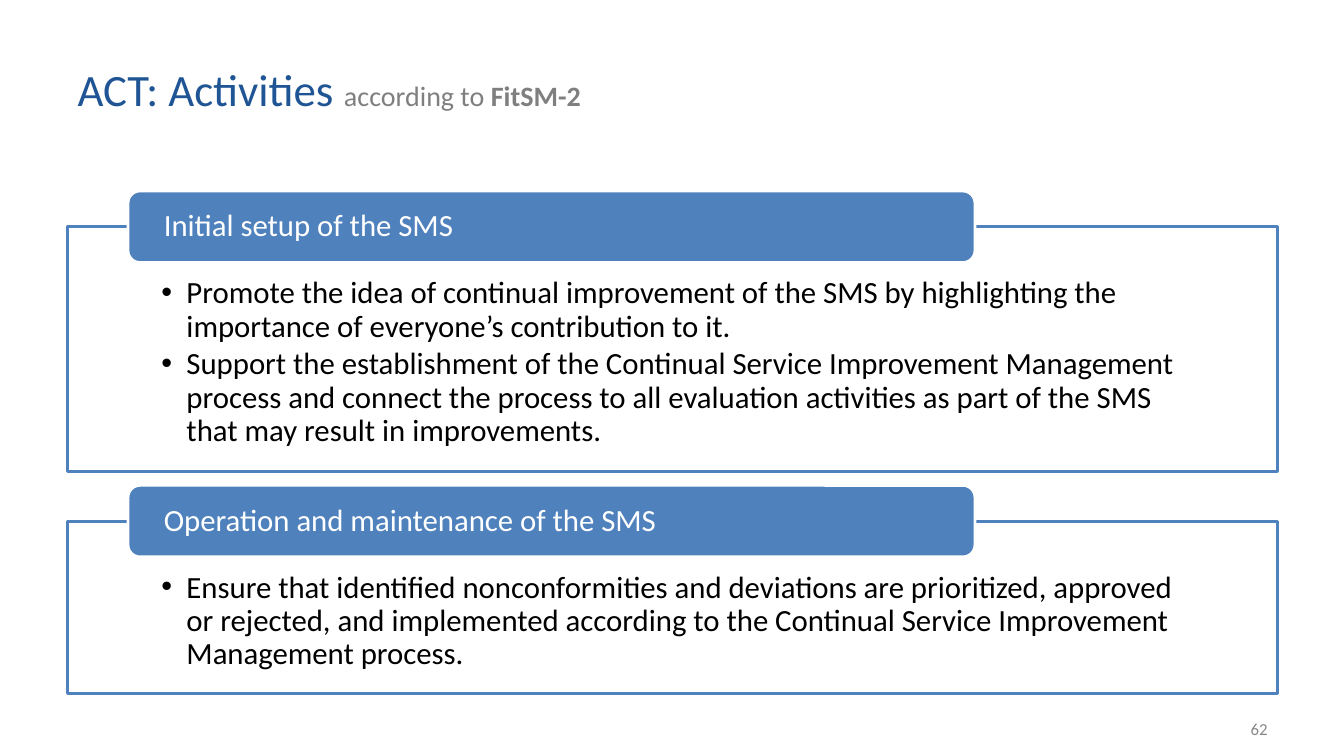
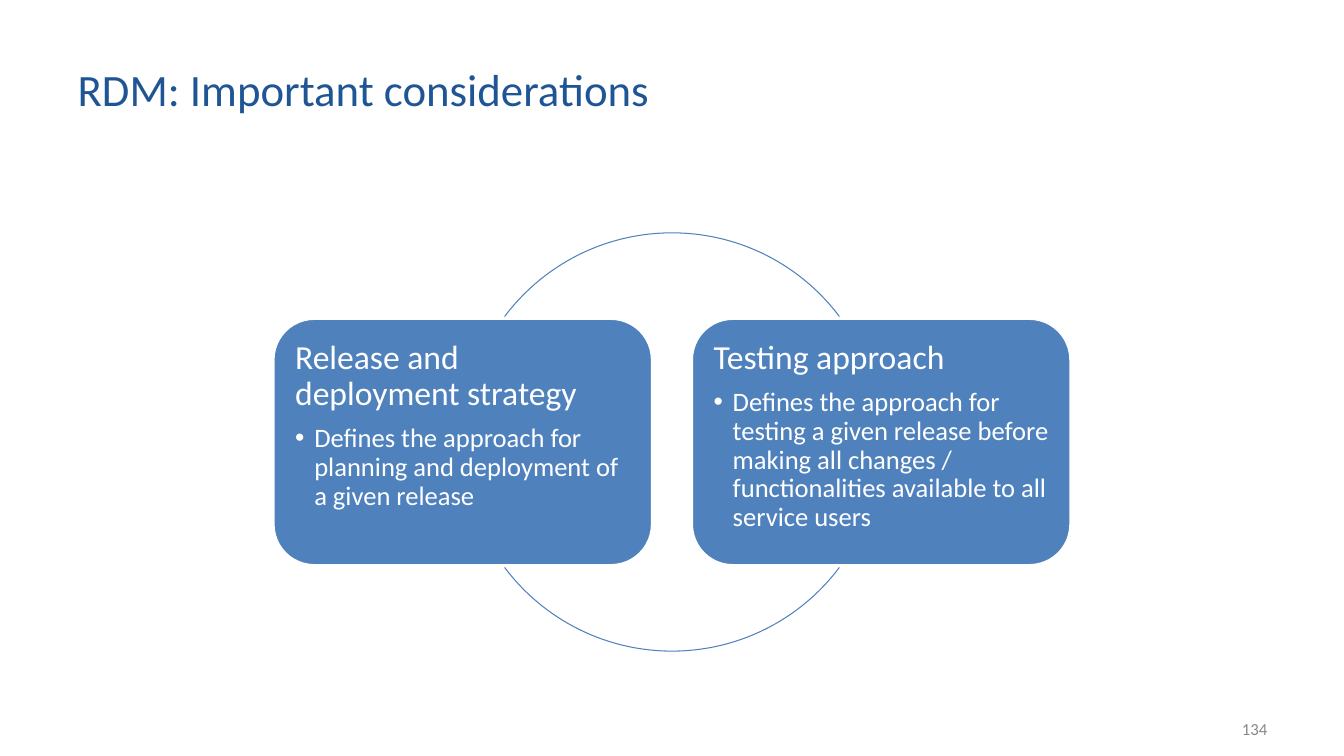
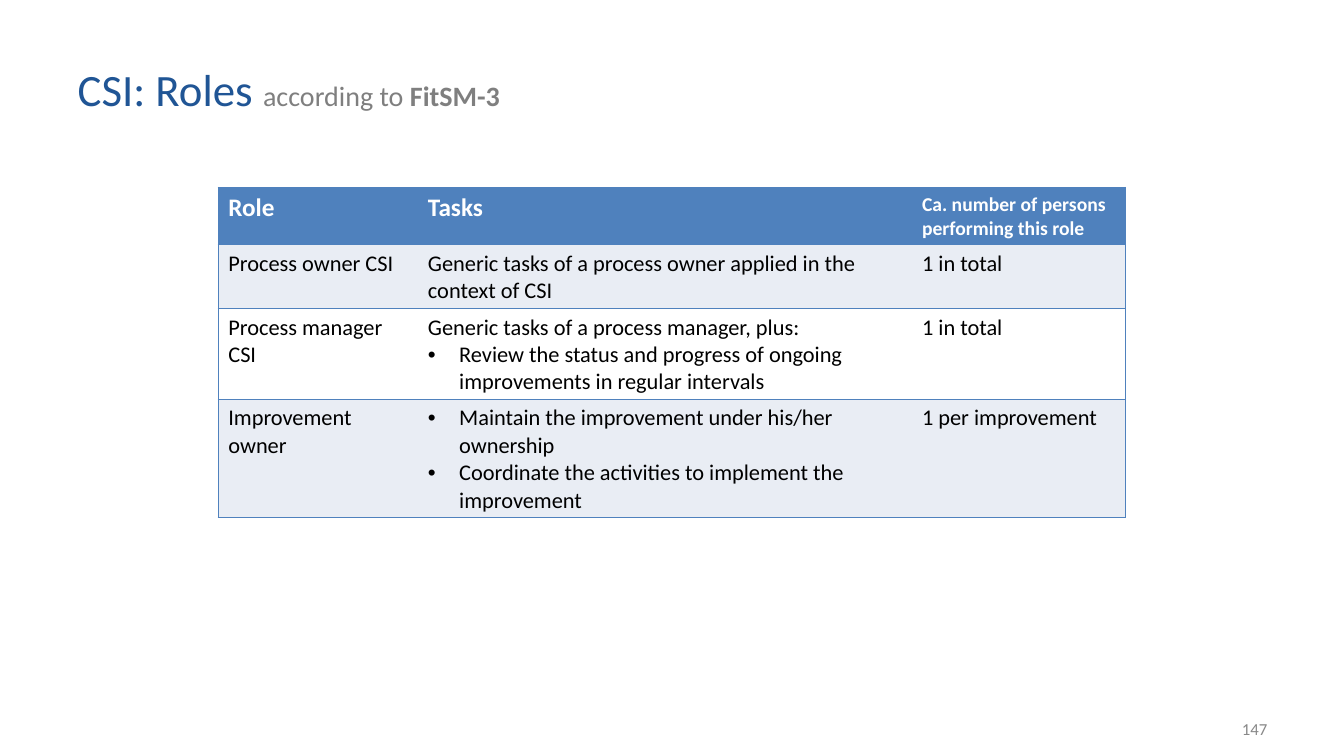
from lxml.etree import SubElement
from pptx import Presentation
from pptx.dml.color import RGBColor
from pptx.enum.shapes import MSO_SHAPE as Preset
from pptx.enum.text import MSO_ANCHOR as Anchor, MSO_AUTO_SIZE as AutoSize, PP_ALIGN as Align
from pptx.oxml.ns import qn
from pptx.util import Inches, Pt

# Shared look
FONT = "Calibri"
TITLE_BLUE = RGBColor(0x20, 0x55, 0x95)
BLUE = RGBColor(0x4F, 0x81, 0xBD)
PALE_BLUE = RGBColor(0xE9, 0xED, 0xF4)
WHITE = RGBColor(0xFF, 0xFF, 0xFF)
BLACK = RGBColor(0, 0, 0)
GREY = RGBColor(0x7F, 0x7F, 0x7F)
NUMBER_GREY = RGBColor(0x88, 0x88, 0x88)

WIDTH, HEIGHT = 13.33, 7.5
MARGIN = 0.67
CONTENT_WIDTH = 12
CENTER = WIDTH / 2
NO_STYLE = "{2D5ABB26-0587-4C30-8999-92F81FD0307C}"

# Content
ACTIVITIES = {
    "title": "ACT: Activities", "standard": "FitSM-2", "number": 62,
    "panels": [
        ("Initial setup of the SMS", 2.43, [
            "Promote the idea of continual improvement of the SMS by highlighting the "
            "importance of everyone’s contribution to it.",
            "Support the establishment of the Continual Service Improvement Management "
            "process and connect the process to all evaluation activities as part of the "
            "SMS that may result in improvements.",
        ]),
        ("Operation and maintenance of the SMS", 1.71, [
            "Ensure that identified nonconformities and deviations are prioritized, approved "
            "or rejected, and implemented according to the Continual Service Improvement "
            "Management process.",
        ]),
    ],
}
CONSIDERATIONS = {
    "title": "RDM: Important considerations", "standard": None, "number": 134,
    "cards": [
        ("Release and deployment strategy",
         "Defines the approach for planning and deployment of a given release"),
        ("Testing approach",
         "Defines the approach for testing a given release before making all changes / "
         "functionalities available to all service users"),
    ],
}
# In the table, each task is (has a bullet, text)
ROLES = {
    "title": "CSI: Roles", "standard": "FitSM-3", "number": 147,
    "columns": [("Role", 1.98, 18), ("Tasks", 4.9, 18),
                ("Ca. number of persons performing this role", 2.12, 14)],
    "row_heights": [0.57, 0.63, 0.9, 1.17],
    "rows": [
        ("Process owner CSI",
         [(False, "Generic tasks of a process owner applied in the context of CSI")],
         "1 in total"),
        ("Process manager CSI",
         [(False, "Generic tasks of a process manager, plus:"),
          (True, "Review the status and progress of ongoing improvements in regular intervals")],
         "1 in total"),
        ("Improvement owner",
         [(True, "Maintain the improvement under his/her ownership"),
          (True, "Coordinate the activities to implement the improvement")],
         "1 per improvement"),
    ],
}


# Text helpers
def format_font(font, size, color, bold=False):
    font.name = FONT
    font.size = Pt(size)
    font.color.rgb = color
    font.bold = bold


def add_bullet(paragraph, indent, color):
    properties = paragraph._p.get_or_add_pPr()
    properties.set("marL", str(Inches(indent)))
    properties.set("indent", str(-Inches(indent)))
    bullet_color = SubElement(properties, qn("a:buClr"))
    SubElement(bullet_color, qn("a:srgbClr"), val=str(color))
    SubElement(properties, qn("a:buFont"), typeface="Arial")
    SubElement(properties, qn("a:buChar"), char="•")


def write_paragraphs(text_frame, items, color, line_spacing=None):
    """Each item is (text, size, bold, bullet indent, space before)."""
    for index, (text, size, bold, indent, space) in enumerate(items):
        paragraph = text_frame.paragraphs[0] if index == 0 else text_frame.add_paragraph()
        paragraph.text = text
        paragraph.alignment = Align.LEFT
        if indent:
            add_bullet(paragraph, indent, color)
        if line_spacing:
            paragraph.line_spacing = line_spacing
        if index and space:
            paragraph.space_before = Pt(space)
        format_font(paragraph.runs[0].font, size, color, bold)


def set_frame(text_frame, insets, anchor):
    text_frame.word_wrap = True
    text_frame.vertical_anchor = anchor
    (text_frame.margin_left, text_frame.margin_top,
     text_frame.margin_right, text_frame.margin_bottom) = map(Inches, insets)


# Shape helpers
def add_shape(slide, preset, box, fill, line, line_width):
    shape = slide.shapes.add_shape(preset, *map(Inches, box))
    shape.shadow.inherit = False
    if fill is None:
        shape.fill.background()
    else:
        shape.fill.solid()
        shape.fill.fore_color.rgb = fill
    shape.line.color.rgb = line
    shape.line.width = Pt(line_width)
    return shape


def add_slide(presentation, content):
    """Title and slide number, the same on every slide."""
    slide = presentation.slides.add_slide(presentation.slide_layouts[5])
    title = slide.shapes.title
    title.left, title.top, title.width, title.height = map(Inches, (MARGIN, 0.3, 9.91, 1.15))
    title.text_frame.auto_size = AutoSize.NONE
    set_frame(title.text_frame, (0.1, 0.05, 0.1, 0.05), Anchor.MIDDLE)
    paragraph = title.text_frame.paragraphs[0]
    paragraph.alignment = Align.LEFT
    parts = [(content["title"], 32, TITLE_BLUE, False)]
    if content["standard"]:
        parts = [(content["title"] + " ", 32, TITLE_BLUE, False),
                 ("according to ", 20, GREY, False),
                 (content["standard"], 20, GREY, True)]
    for text, size, color, bold in parts:
        run = paragraph.add_run()
        run.text = text
        format_font(run.font, size, color, bold)

    number_width = 3.11
    number = slide.shapes.add_textbox(
        *map(Inches, (MARGIN + CONTENT_WIDTH - number_width, 7.03, number_width, 0.4)))
    set_frame(number.text_frame, (0.1, 0.05, 0.1, 0.05), Anchor.MIDDLE)
    write_paragraphs(number.text_frame, [(str(content["number"]), 12, False, 0, 0)], NUMBER_GREY)
    number.text_frame.paragraphs[0].alignment = Align.RIGHT
    return slide


# Slide bodies
def build_activities(presentation):
    slide = add_slide(presentation, ACTIVITIES)
    top, gap, band_height = 2.25, 0.49, 0.71
    for heading, height, bullets in ACTIVITIES["panels"]:
        panel = add_shape(slide, Preset.RECTANGLE, (MARGIN, top, CONTENT_WIDTH, height),
                          WHITE, BLUE, 2)
        set_frame(panel.text_frame, (0.93, 0.5, 0.93, 0.17), Anchor.TOP)
        write_paragraphs(panel.text_frame,
                         [(text, 22, False, 0.25, 3.3) for text in bullets], BLACK, 0.9)
        # The heading band straddles the panel's top edge
        band = add_shape(slide, Preset.ROUNDED_RECTANGLE,
                         (MARGIN + CONTENT_WIDTH * 0.05, top - band_height / 2,
                          CONTENT_WIDTH * 0.7, band_height), BLUE, WHITE, 2)
        set_frame(band.text_frame, (0.32, 0, 0.32, 0), Anchor.MIDDLE)
        write_paragraphs(band.text_frame, [(heading, 22, False, 0, 0)], WHITE, 0.9)
        top += height + gap


def build_considerations(presentation):
    slide = add_slide(presentation, CONSIDERATIONS)
    middle, diameter = 4.385, 4.15
    card_width, card_height = 3.76, 2.45
    # Cards sit on the left and right points of the circle
    for side, (heading, detail) in zip((-1, 1), CONSIDERATIONS["cards"]):
        card = add_shape(slide, Preset.ROUNDED_RECTANGLE,
                         (CENTER + side * diameter / 2 - card_width / 2,
                          middle - card_height / 2, card_width, card_height), BLUE, WHITE, 2)
        set_frame(card.text_frame, (0.1, 0.1, 0.1, 0.1), Anchor.TOP)
        write_paragraphs(card.text_frame, [(heading, 24, False, 0, 0),
                                           (detail, 19, False, 0.19, 8.4)], WHITE, 0.9)
    # Arcs above and below; angles are stored in units of 1/0.6 degree
    half_sweep = 53.13
    for direction in (270, 90):
        arc = add_shape(slide, Preset.ARC,
                        (CENTER - diameter / 2, middle - diameter / 2, diameter, diameter),
                        None, BLUE, 0.75)
        arc.adjustments[0] = (direction - half_sweep) * 0.6
        arc.adjustments[1] = (direction + half_sweep) * 0.6


def add_borders(cell, sides):
    properties = cell._tc.get_or_add_tcPr()
    for side in sides:
        line = SubElement(properties, qn("a:ln" + side), w=str(Pt(1)))
        fill = SubElement(line, qn("a:solidFill"))
        SubElement(fill, qn("a:srgbClr"), val=str(BLUE))


def build_roles(presentation):
    slide = add_slide(presentation, ROLES)
    columns, heights = ROLES["columns"], ROLES["row_heights"]
    table_width = sum(width for _, width, _ in columns)
    frame = slide.shapes.add_table(
        len(heights), len(columns),
        *map(Inches, (CENTER - table_width / 2, 1.86, table_width, sum(heights))))
    table = frame.table
    table.first_row = table.horz_banding = False
    table._tbl.tblPr.find(qn("a:tableStyleId")).text = NO_STYLE
    for column, (_, width, _) in zip(table.columns, columns):
        column.width = Inches(width)
    for row, height in zip(table.rows, heights):
        row.height = Inches(height)

    header = [[(text, size, True, 0, 0)] for text, _, size in columns]
    body = [[[(role, 16, False, 0, 0)],
             [(text, 16, False, 0.31 if bullet else 0, 0) for bullet, text in tasks],
             [(persons, 16, False, 0, 0)]] for role, tasks, persons in ROLES["rows"]]
    outer_sides = {0: "L", len(columns) - 1: "R"}
    for row_index, row_items in enumerate([header] + body):
        fill = BLUE if row_index == 0 else PALE_BLUE if row_index % 2 else WHITE
        for column_index, items in enumerate(row_items):
            cell = table.cell(row_index, column_index)
            add_borders(cell, outer_sides.get(column_index, "") + "TB")
            cell.fill.solid()
            cell.fill.fore_color.rgb = fill
            write_paragraphs(cell.text_frame, items, BLACK if row_index else WHITE)


def main():
    presentation = Presentation()
    presentation.slide_width = Inches(WIDTH)
    presentation.slide_height = Inches(HEIGHT)
    build_activities(presentation)
    build_considerations(presentation)
    build_roles(presentation)
    presentation.save("out.pptx")


if __name__ == "__main__":
    main()
